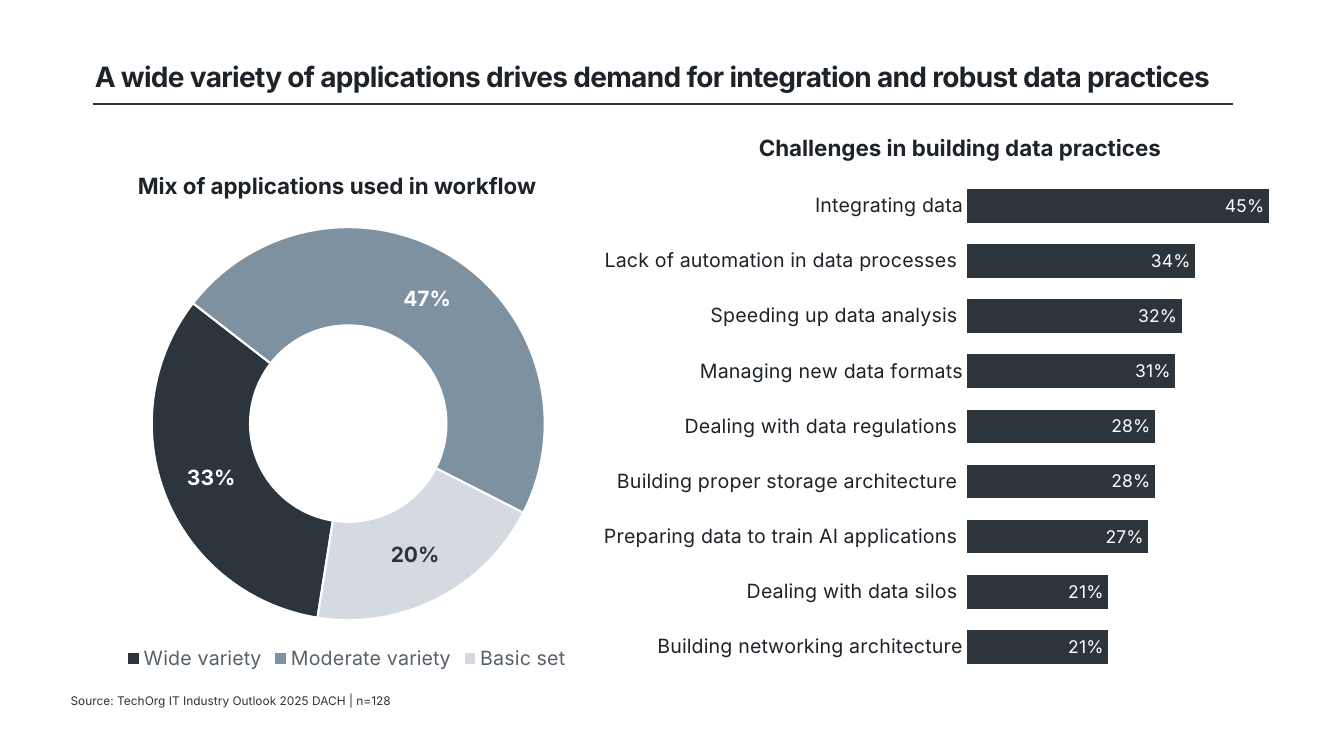
from dataclasses import dataclass

from lxml import etree
from pptx import Presentation
from pptx.chart.data import CategoryChartData
from pptx.dml.color import RGBColor
from pptx.enum.chart import XL_CHART_TYPE, XL_LABEL_POSITION, XL_LEGEND_POSITION, XL_TICK_MARK
from pptx.enum.shapes import MSO_CONNECTOR
from pptx.enum.text import MSO_ANCHOR, MSO_AUTO_SIZE, PP_ALIGN
from pptx.oxml.ns import qn
from pptx.util import Pt

DOUGHNUT, BAR = XL_CHART_TYPE.DOUGHNUT, XL_CHART_TYPE.BAR_CLUSTERED
INSIDE_END, LEGEND_BOTTOM = XL_LABEL_POSITION.INSIDE_END, XL_LEGEND_POSITION.BOTTOM
NO_TICKS, STRAIGHT = XL_TICK_MARK.NONE, MSO_CONNECTOR.STRAIGHT
MIDDLE, TOP = MSO_ANCHOR.MIDDLE, MSO_ANCHOR.TOP
LEFT, CENTER = PP_ALIGN.LEFT, PP_ALIGN.CENTER
FIXED, GROW = MSO_AUTO_SIZE.NONE, MSO_AUTO_SIZE.SHAPE_TO_FIT_TEXT


@dataclass(frozen=True)
class Theme:
    ink: str = "1D2328"
    dark: str = "2C353C"
    mid: str = "7E91A1"
    light: str = "D4DAE0"
    grey: str = "586169"
    white: str = "FFFFFF"
    font: str = "Inter"
    chart_font: str = "Roboto"
    title: float = 20
    heading: float = 16
    axis: float = 14
    share: float = 15
    bar_value: float = 12.5
    source: float = 8.5


THEME = Theme()

APPLICATION_MIX = [
    ("Wide variety", 0.33, THEME.dark, THEME.white),
    ("Moderate variety", 0.47, THEME.mid, THEME.white),
    ("Basic set", 0.20, THEME.light, THEME.dark),
]
CHALLENGES = [
    ("Building networking architecture", 0.21),
    ("Dealing with data silos ", 0.21),
    ("Preparing data to train AI applications ", 0.27),
    ("Building proper storage architecture ", 0.28),
    ("Dealing with data regulations ", 0.28),
    ("Managing new data formats", 0.31),
    ("Speeding up data analysis ", 0.32),
    ("Lack of automation in data processes ", 0.34),
    ("Integrating data", 0.45),
]


def apply(target, values):
    for name, value in values.items():
        setattr(target, name, value)


def style_font(font, size, color, bold=False, family=THEME.font):
    apply(font, {"size": Pt(size), "bold": bold, "name": family})
    font.color.rgb = RGBColor.from_string(color)


def fill(part, color):
    part.format.fill.solid()
    part.format.fill.fore_color.rgb = RGBColor.from_string(color)


def points(box):
    return [Pt(length) for length in box]


def add_title(slide, text, box):
    title = slide.shapes.title
    apply(title, dict(zip(("left", "top", "width", "height"), points(box))))
    apply(title.text_frame, {"text": text, "vertical_anchor": MIDDLE,
                             "word_wrap": True, "auto_size": FIXED})
    paragraph = title.text_frame.paragraphs[0]
    apply(paragraph, {"alignment": LEFT, "line_spacing": 0.9})
    run = paragraph.runs[0]
    style_font(run.font, THEME.title, THEME.ink, bold=True)
    run.font._element.set("spc", "-50")


def add_rule(slide, left, right, y):
    rule = slide.shapes.add_connector(STRAIGHT, *points((left, y, right, y)))
    rule.line.width = Pt(1)
    rule.line.color.rgb = RGBColor.from_string(THEME.dark)
    etree.SubElement(rule._element.spPr, qn("a:effectLst"))


def add_text(slide, text, box, size, color, bold=False, align=LEFT, frame_format=None):
    frame = slide.shapes.add_textbox(*points(box)).text_frame
    apply(frame, {"text": text, "word_wrap": True, **(frame_format or {})})
    paragraph = frame.paragraphs[0]
    paragraph.alignment = align
    style_font(paragraph.runs[0].font, size, color, bold)


def add_heading(slide, text, box):
    add_text(slide, text, box, THEME.heading, THEME.ink, True, CENTER,
             {"vertical_anchor": TOP, "auto_size": GROW})


def place_plot(chart, x, y, w, h):
    """Fix the inner plot area as fractions of the chart."""
    plot_area = chart.element.find(".//" + qn("c:plotArea"))
    for old_layout in plot_area.findall(qn("c:layout")):
        plot_area.remove(old_layout)
    layout = etree.Element(qn("c:layout"))
    manual = etree.SubElement(layout, qn("c:manualLayout"))
    settings = {"layoutTarget": "inner", "xMode": "edge", "yMode": "edge",
                "x": x, "y": y, "w": w, "h": h}
    for tag, value in settings.items():
        etree.SubElement(manual, qn("c:" + tag)).set("val", str(value))
    plot_area.insert(0, layout)


def add_percent_chart(slide, kind, box, categories, values, plot_box, font_size):
    data = CategoryChartData(number_format="0%")
    data.categories = categories
    data.add_series("Series 1", values)
    chart = slide.shapes.add_chart(kind, *points(box), data).chart
    apply(chart, {"has_title": False, "has_legend": False})
    style_font(chart.font, font_size, THEME.grey, family=THEME.chart_font)
    place_plot(chart, *plot_box)
    series = chart.plots[0].series[0]
    apply(series.data_labels, {"show_value": True, "show_percentage": False,
                               "number_format": "0%", "number_format_is_linked": False})
    return chart, series


def add_mix_doughnut(slide, box):
    names, shares, slice_colors, label_colors = zip(*APPLICATION_MIX)
    chart, series = add_percent_chart(slide, DOUGHNUT, box, names, shares,
                                      (0.19, 0.027, 0.625, 0.855), 11)
    chart.plots[0].vary_by_categories = True
    for tag, value in {"firstSliceAng": 189, "holeSize": 54}.items():
        chart.element.find(".//" + qn("c:" + tag)).set("val", str(value))

    # Slices and their labels
    style_font(series.data_labels.font, THEME.share, THEME.dark, bold=True)
    for index, (slice_color, label_color) in enumerate(zip(slice_colors, label_colors)):
        point = series.points[index]
        fill(point, slice_color)
        point.format.line.width = Pt(1.5)
        point.format.line.color.rgb = RGBColor.from_string(THEME.white)
        style_font(point.data_label.font, THEME.share, label_color, bold=True)

    # Legend
    chart.has_legend = True
    apply(chart.legend, {"position": LEGEND_BOTTOM, "include_in_layout": False})
    style_font(chart.legend.font, THEME.axis, THEME.grey)


def add_challenge_bars(slide, box):
    names, shares = zip(*CHALLENGES)
    chart, series = add_percent_chart(slide, BAR, box, names, shares,
                                      (0.538, 0.025, 0.406, 0.964), 10)
    apply(chart.plots[0], {"gap_width": 64, "overlap": -7, "vary_by_categories": False})
    fill(series, THEME.dark)
    series.data_labels.position = INSIDE_END
    style_font(series.data_labels.font, THEME.bar_value, THEME.white)

    # Axes
    apply(chart.value_axis, {"visible": False, "has_major_gridlines": False,
                             "minimum_scale": 0, "maximum_scale": 0.47})
    challenge_axis = chart.category_axis
    apply(challenge_axis, {"major_tick_mark": NO_TICKS, "minor_tick_mark": NO_TICKS,
                           "has_major_gridlines": False})
    challenge_axis.format.line.fill.background()
    style_font(challenge_axis.tick_labels.font, THEME.axis, THEME.ink)


def main():
    deck = Presentation()
    apply(deck, {"slide_width": Pt(960), "slide_height": Pt(540)})
    slide = deck.slides.add_slide(deck.slide_layouts[5])

    # Title and rule
    add_title(slide, "A wide variety of applications drives demand for integration "
                     "and robust data practices", (60.5, 31, 856.8, 50.4))
    add_rule(slide, 66.2, 880.6, 74.2)

    # Application mix
    add_mix_doughnut(slide, (15.8, 153.4, 463.7, 328.3))
    add_heading(slide, "Mix of applications used in workflow", (89.3, 119.5, 303.1, 26.6))

    # Challenges
    add_challenge_bars(slide, (393.1, 118.1, 553.7, 367.9))
    add_heading(slide, "Challenges in building data practices", (517.7, 92.2, 336.2, 26.6))

    # Source
    no_margins = dict.fromkeys(
        ("margin_left", "margin_top", "margin_right", "margin_bottom"), Pt(0))
    add_text(slide, "Source: TechOrg IT Industry Outlook 2025 DACH | n=128",
             (50.4, 493.2, 504, 14.4), THEME.source, THEME.dark,
             frame_format={"vertical_anchor": MIDDLE, **no_margins})

    deck.save("out.pptx")


if __name__ == "__main__":
    main()
